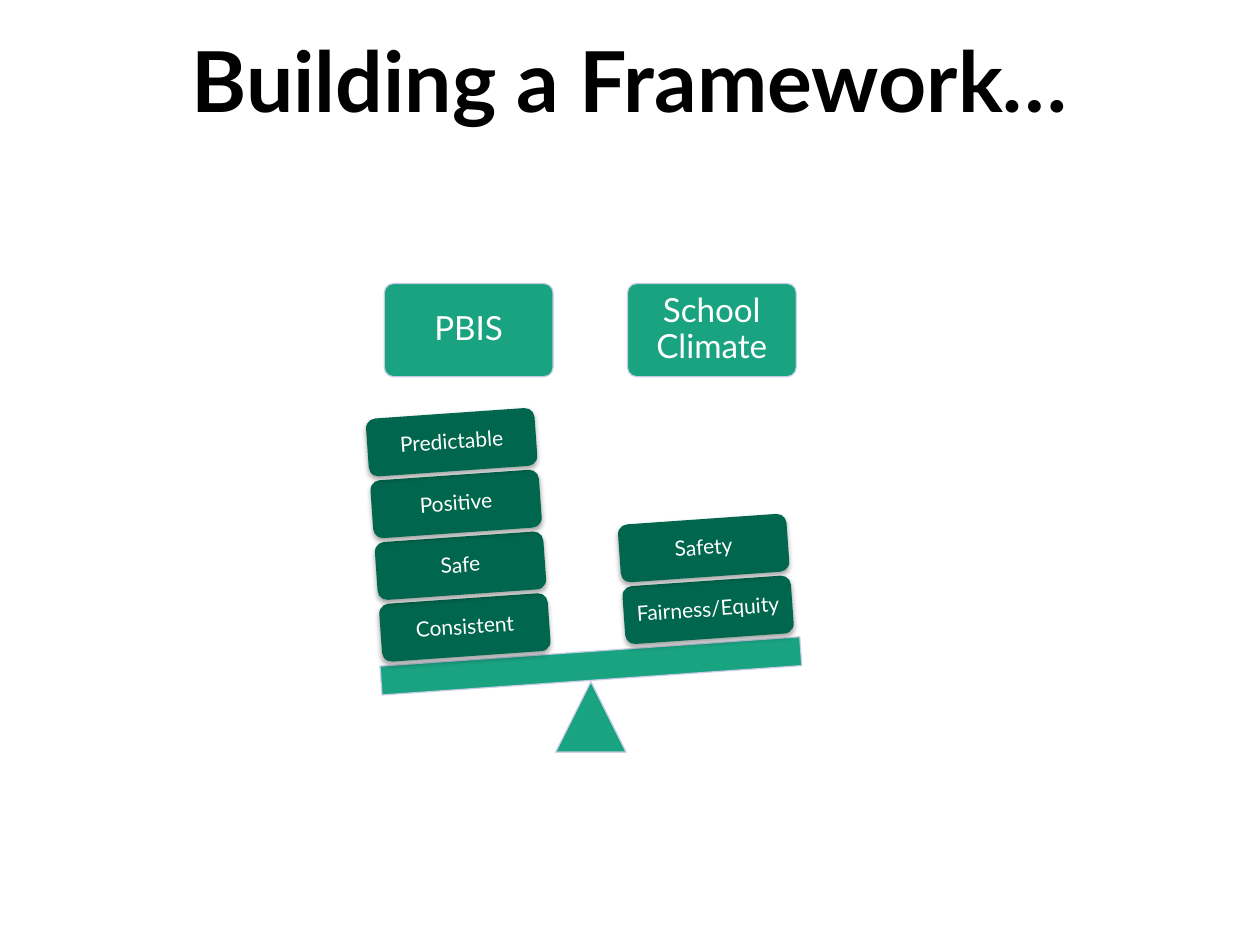
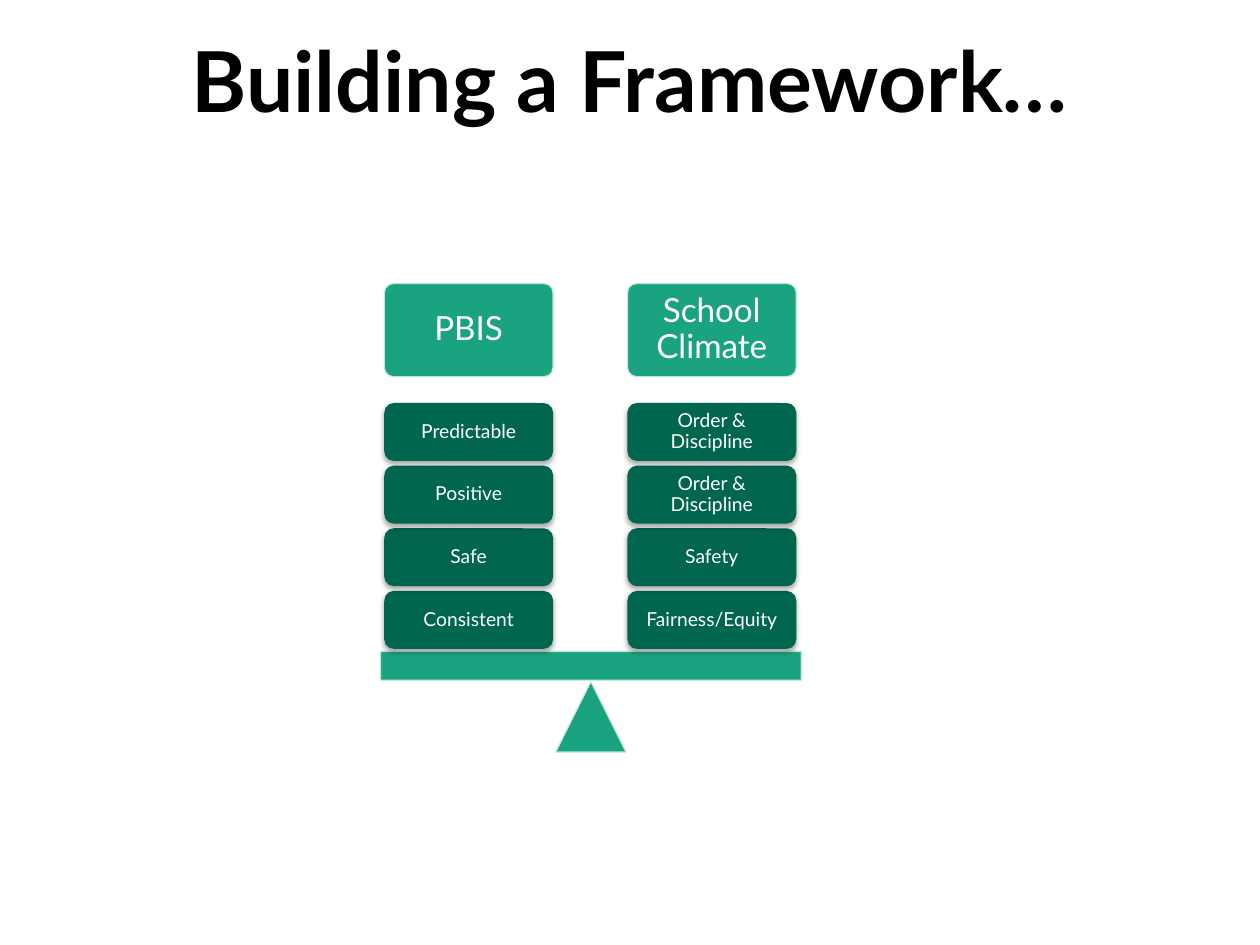
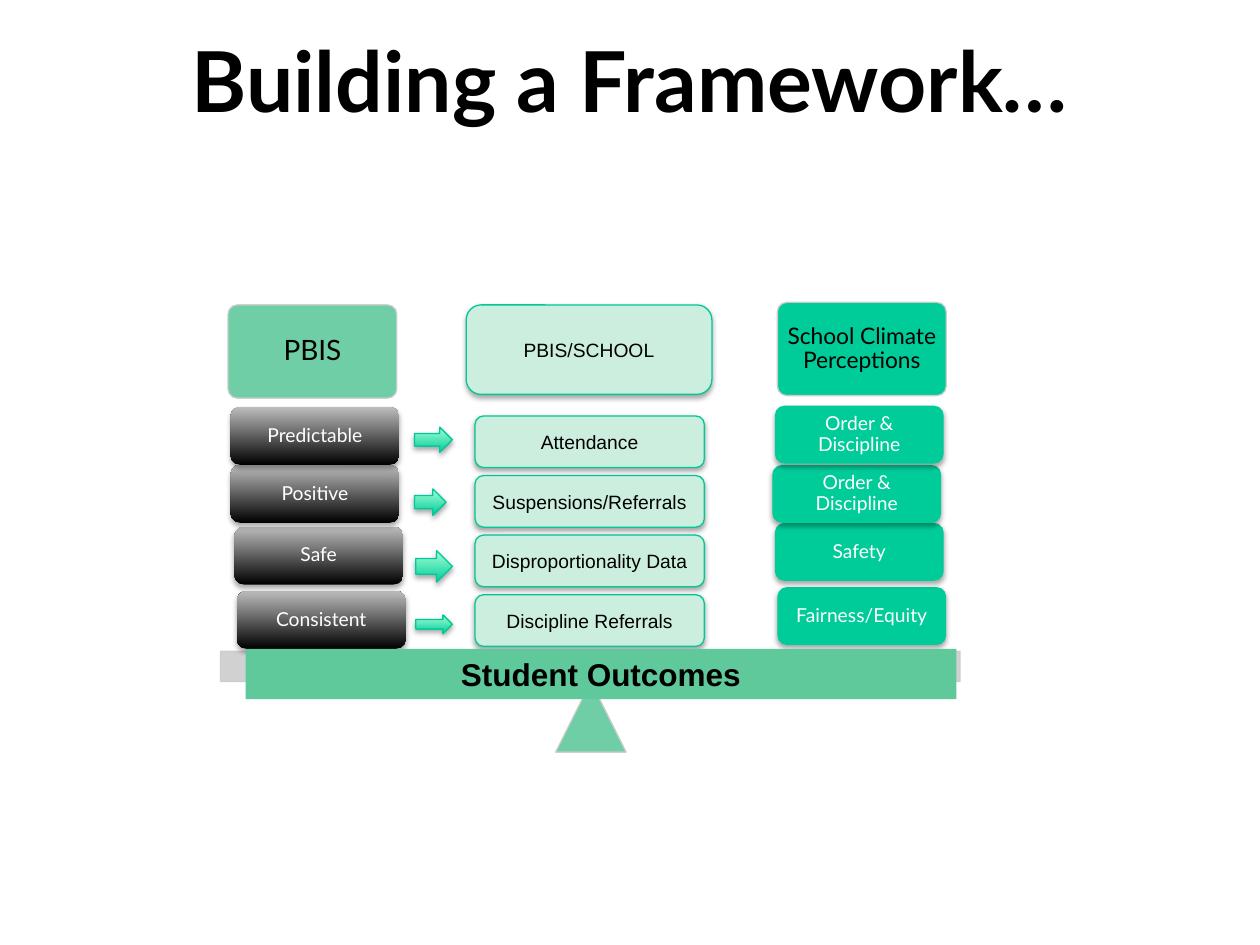
import lxml.etree
import pptx
import pptx.dml.color
import pptx.enum.shapes
import pptx.enum.text
import pptx.oxml.ns
import pptx.util

RGBColor = pptx.dml.color.RGBColor
SHAPE = pptx.enum.shapes.MSO_SHAPE
ANCHOR = pptx.enum.text.MSO_ANCHOR
Inches = pptx.util.Inches
Pt = pptx.util.Pt
qn = pptx.oxml.ns.qn

BLACK = RGBColor(0x00, 0x00, 0x00)
WHITE = RGBColor(0xFF, 0xFF, 0xFF)
GREEN = RGBColor(0x00, 0x99, 0x73)
DARK_GREEN = RGBColor(0x00, 0x66, 0x4D)
SOFT_GREEN = RGBColor(0x60, 0xC9, 0x9C)
BRIGHT_GREEN = RGBColor(0x00, 0xCC, 0x99)
PALE_GREEN = RGBColor(0xCC, 0xEE, 0xDF)
EDGE_GREEN = RGBColor(0x00, 0xC8, 0x96)
MINT = RGBColor(0xA5, 0xFF, 0xD6)
LAVENDER = RGBColor(0xCE, 0xCE, 0xEC)
LIGHT_MINT = RGBColor(0xCC, 0xEC, 0xDE)
SILVER = RGBColor(0xCC, 0xCC, 0xCC)
GRAY = RGBColor(0xBD, 0xBD, 0xBD)

TITLE = "Building a Framework…"
PRACTICES = ["Consistent", "Safe", "Positive", "Predictable"]
PERCEPTIONS = ["Fairness/Equity", "Safety", "Order & Discipline", "Order & Discipline"]
MEASURES = ["Discipline Referrals", "Disproportionality Data",
            "Suspensions/Referrals", "Attendance"]

SCALES = [
    dict(edge=LAVENDER, tilt=-4, size=12, step=(-0.035, -0.49),
         stacks=[(3.02, 4.75, PRACTICES), (4.95, 4.61, PERCEPTIONS[:2])]),
    dict(edge=LIGHT_MINT, tilt=0, size=11, step=(0, -0.497),
         stacks=[(4.98, 4.69, PERCEPTIONS), (3.05, 4.69, PRACTICES)]),
]
HEADINGS = [(3.05, "PBIS"), (4.98, "School Climate")]

PERCEPTION_PLACES = [(6.17, 4.66), (6.15, 4.15), (6.13, 3.69), (6.15, 3.22)]
PRACTICE_PLACES = [(1.88, 4.69), (1.86, 4.18), (1.83, 3.69), (1.83, 3.23)]
ARROWS = [(3.3, 4.88, 0.29, 0.15), (3.3, 4.37, 0.29, 0.25),
          (3.29, 3.88, 0.25, 0.21), (3.29, 3.39, 0.3, 0.2)]

HEADING_SIZE = (1.34, 0.74)
BLOCK_SIZE = (1.34, 0.46)
FULCRUM = (4.41, 5.41, 0.56, 0.56)


def write(shape, text, size, color, font="Lato", bold=False, spacing=0.9, insets=(0.05, 0.05)):
    frame = shape.text_frame
    frame.word_wrap = True
    frame.vertical_anchor = ANCHOR.MIDDLE
    frame.margin_left = frame.margin_right = Inches(insets[0])
    frame.margin_top = frame.margin_bottom = Inches(insets[1])
    frame.text = text
    paragraph = frame.paragraphs[0]
    paragraph.alignment = pptx.enum.text.PP_ALIGN.CENTER
    paragraph.line_spacing = spacing
    run_font = paragraph.runs[0].font
    run_font.name, run_font.size, run_font.bold = font, Pt(size), bold
    run_font.color.rgb = color


def add_shadow(shape):
    effects = shape.element.spPr.find(qn("a:effectLst"))
    shadow = lxml.etree.SubElement(effects, qn("a:outerShdw"), blurRad=str(Pt(3.1)),
                                   dist=str(Pt(1.8)), dir="5400000", rotWithShape="0")
    color = lxml.etree.SubElement(shadow, qn("a:srgbClr"), val="000000")
    lxml.etree.SubElement(color, qn("a:alpha"), val="35000")


def add_part(slide, kind, box, fill, edge=None, translucent=False, shadow=False, tilt=0):
    shape = slide.shapes.add_shape(kind, *[Inches(length) for length in box])
    shape.shadow.inherit = False
    shape.rotation = tilt
    if isinstance(fill, tuple) and not isinstance(fill, RGBColor):
        shape.fill.gradient()
        shape.fill.gradient_angle = 90
        for stop, color, position in zip(shape.fill.gradient_stops, fill, (0, 1)):
            stop.color.rgb, stop.position = color, position
    else:
        shape.fill.solid()
        shape.fill.fore_color.rgb = fill
    if edge is None:
        shape.line.fill.background()
    else:
        shape.line.color.rgb = edge
        shape.line.width = Pt(0.75)
    if translucent:
        for color in shape.element.spPr.iter(qn("a:srgbClr")):
            lxml.etree.SubElement(color, qn("a:alpha"), val="90000")
    if shadow:
        add_shadow(shape)
    return shape


def add_heading(slide, left, top, text, size, fill, edge, color, translucent=True, inset=0.08):
    shape = add_part(slide, SHAPE.ROUNDED_RECTANGLE, (left, top, *HEADING_SIZE),
                     fill, edge, translucent)
    shape.adjustments[0] = 0.1
    write(shape, text, size, color, insets=(inset, inset))


def add_block(slide, left, top, text, fill, size=11, tilt=0):
    shape = add_part(slide, SHAPE.ROUNDED_RECTANGLE, (left, top, *BLOCK_SIZE),
                     fill, shadow=True, tilt=tilt)
    write(shape, text, size, WHITE)


def add_measure(slide, box, text):
    shape = add_part(slide, SHAPE.ROUNDED_RECTANGLE, box, PALE_GREEN, EDGE_GREEN, shadow=True)
    write(shape, text, 11, BLACK, "Arial", spacing=1, insets=(0.1, 0.05))


def add_titled_slide(presentation):
    slide = presentation.slides.add_slide(presentation.slide_layouts[6])
    title = slide.shapes.add_textbox(0, 0, presentation.slide_width, Inches(1.25))
    write(title, TITLE, 48, BLACK, bold=True, spacing=1, insets=(0.1, 0.05))
    return slide


def add_scale(slide, edge, tilt, size, step, stacks):
    for left, text in HEADINGS:
        add_heading(slide, left, 2.25, text, 19, GREEN, edge, WHITE)
    add_part(slide, SHAPE.ISOSCELES_TRIANGLE, FULCRUM, GREEN, edge, True)
    add_part(slide, SHAPE.RECTANGLE, (3.02, 5.17, 3.34, 0.23), GREEN, edge, True, tilt=tilt)
    for left, top, labels in stacks:
        for level, label in enumerate(labels):
            add_block(slide, left + level * step[0], top + level * step[1],
                      label, DARK_GREEN, size, tilt)


def add_outcomes(slide):
    add_heading(slide, 1.81, 2.42, "PBIS", 16, SOFT_GREEN, SILVER, BLACK)
    add_heading(slide, 6.17, 2.4, "School Climate Perceptions", 13, BRIGHT_GREEN, SILVER,
                BLACK, translucent=False, inset=0.05)
    add_part(slide, SHAPE.ISOSCELES_TRIANGLE, FULCRUM, SOFT_GREEN, SILVER, True)
    add_part(slide, SHAPE.RECTANGLE, (1.75, 5.17, 5.87, 0.24), SILVER, SILVER, True)
    for labels, places, fill in [(PERCEPTIONS, PERCEPTION_PLACES, BRIGHT_GREEN),
                                 (PRACTICES, PRACTICE_PLACES, (BLACK, GRAY))]:
        for label, (left, top) in zip(labels, places):
            add_block(slide, left, top, label, fill)
    for level, label in enumerate(MEASURES):
        add_measure(slide, (3.77, 4.72 - level * 0.473, 1.82, 0.41), label)
    add_measure(slide, (3.7, 2.42, 1.95, 0.71), "PBIS/SCHOOL")
    beam = add_part(slide, SHAPE.RECTANGLE, (1.95, 5.15, 5.64, 0.4), SOFT_GREEN)
    write(beam, "Student Outcomes", 18, BLACK, "Arial", True, 1, (0.1, 0.05))
    beam.text_frame.vertical_anchor = ANCHOR.TOP
    for box in ARROWS:
        add_part(slide, SHAPE.RIGHT_ARROW, box, (BRIGHT_GREEN, MINT), EDGE_GREEN, shadow=True)


def main():
    presentation = pptx.Presentation()
    presentation.slide_width = Inches(10)
    presentation.slide_height = Inches(7.5)
    for scale in SCALES:
        add_scale(add_titled_slide(presentation), **scale)
    add_outcomes(add_titled_slide(presentation))
    presentation.save("out.pptx")


if __name__ == "__main__":
    main()
